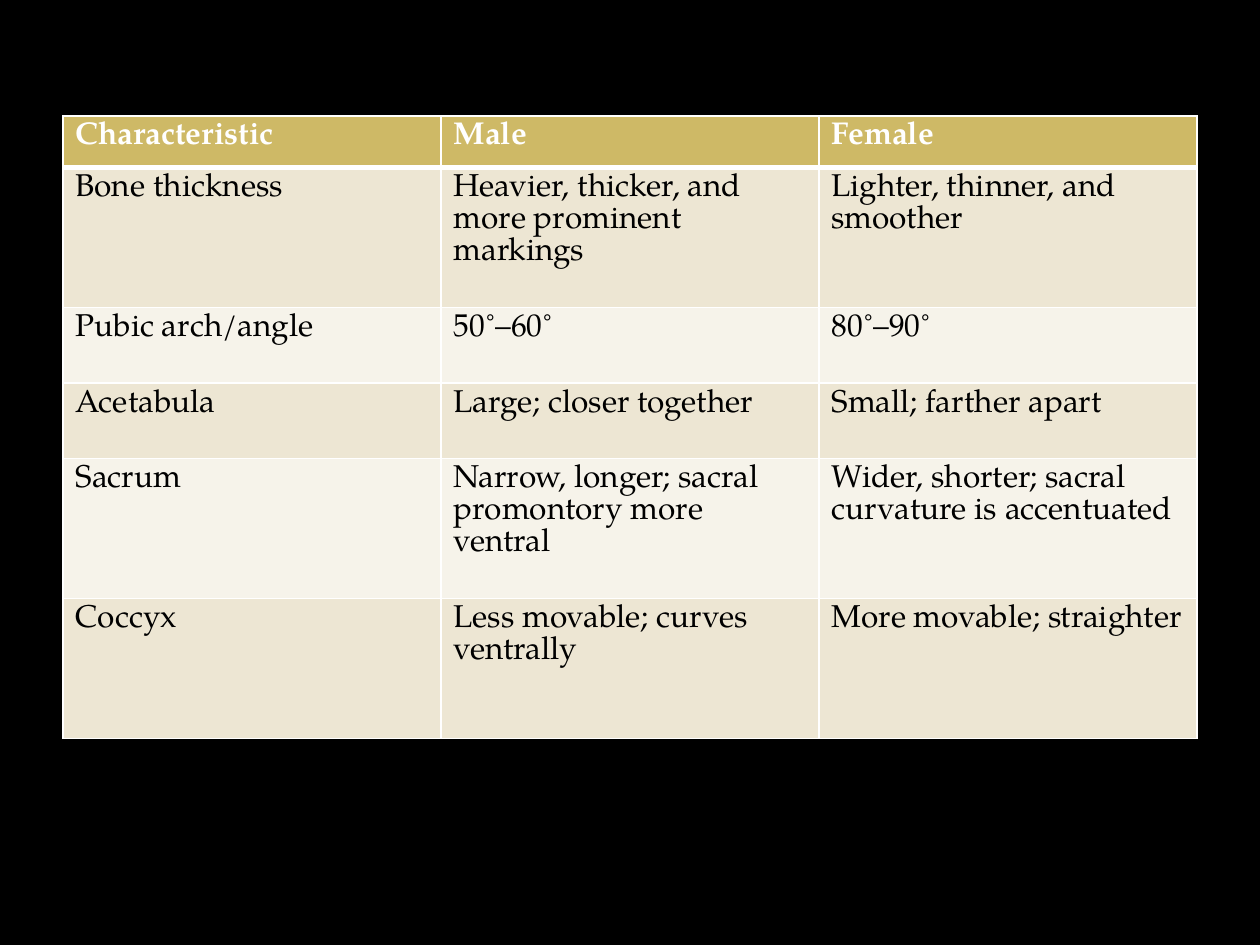
import dataclasses
import pptx
import pptx.util
import pptx.dml.color
import pptx.oxml.ns
import lxml.etree

Inches = pptx.util.Inches


@dataclasses.dataclass
class Theme:
    font: str = "TeX Gyre Pagella"
    size: int = 18
    back: str = "000000"
    ink: str = "000000"
    white: str = "FFFFFF"
    head: str = "CEB966"
    bands: tuple = ("EDE6D3", "F6F3EA")
    thin: int = 1
    thick: int = 3


def paint(fill, tone):
    fill.solid()
    fill.fore_color.rgb = pptx.dml.color.RGBColor.from_string(tone)


class Deck:
    def __init__(self, theme):
        self.theme = theme
        self.file = pptx.Presentation()
        self.file.slide_width = Inches(10)
        self.file.slide_height = Inches(7.5)
        self.slide = self.file.slides.add_slide(self.file.slide_layouts[6])
        paint(self.slide.background.fill, theme.back)

    def edge(self, cell, side, width):
        qn = pptx.oxml.ns.qn
        line = lxml.etree.Element(qn("a:ln" + side), w=str(pptx.util.Pt(width)))
        fill = lxml.etree.SubElement(line, qn("a:solidFill"))
        lxml.etree.SubElement(fill, qn("a:srgbClr"), val=self.theme.white)
        return line

    def cell(self, cell, text, tone, ink, bold, base, top):
        theme = self.theme
        paint(cell.fill, tone)
        run = cell.text_frame.paragraphs[0].add_run()
        run.text = text
        run.font.name = theme.font
        run.font.size = pptx.util.Pt(theme.size)
        run.font.bold = bold
        run.font.color.rgb = pptx.dml.color.RGBColor.from_string(ink)
        props = cell._tc.get_or_add_tcPr()
        sides = {"L": theme.thin, "R": theme.thin, "T": top, "B": base}
        for spot, (side, width) in enumerate(sides.items()):
            props.insert(spot, self.edge(cell, side, width))

    def table(self, left, top, width, highs, rows):
        theme = self.theme
        frame = self.slide.shapes.add_table(
            len(rows), len(rows[0]), Inches(left), Inches(top),
            Inches(width), Inches(sum(highs)))
        grid = frame.table
        for col in grid.columns:
            col.width = Inches(width / len(rows[0]))
        for i, (high, row) in enumerate(zip(highs, rows)):
            grid.rows[i].height = Inches(high)
            head = i == 0
            tone = theme.head if head else theme.bands[(i - 1) % 2]
            ink = theme.white if head else theme.ink
            base = theme.thick if head else theme.thin
            lid = theme.thick if i == 1 else theme.thin
            for j, text in enumerate(row):
                self.cell(grid.cell(i, j), text, tone, ink, head, base, lid)


def main():
    deck = Deck(Theme())
    short, tall = 0.6, 1.11
    deck.table(0.5, 0.92, 9, [0.41, tall, short, short, tall, tall], [
        ("Characteristic", "Male", "Female"),
        ("Bone thickness", "Heavier, thicker, and more prominent markings",
         "Lighter, thinner, and smoother"),
        ("Pubic arch/angle", "50˚–60˚", "80˚–90˚"),
        ("Acetabula", "Large; closer together", "Small; farther apart"),
        ("Sacrum", "Narrow, longer; sacral promontory more ventral",
         "Wider, shorter; sacral curvature is accentuated"),
        ("Coccyx", "Less movable; curves ventrally",
         "More movable; straighter"),
    ])
    deck.file.save("out.pptx")


if __name__ == "__main__":
    main()
